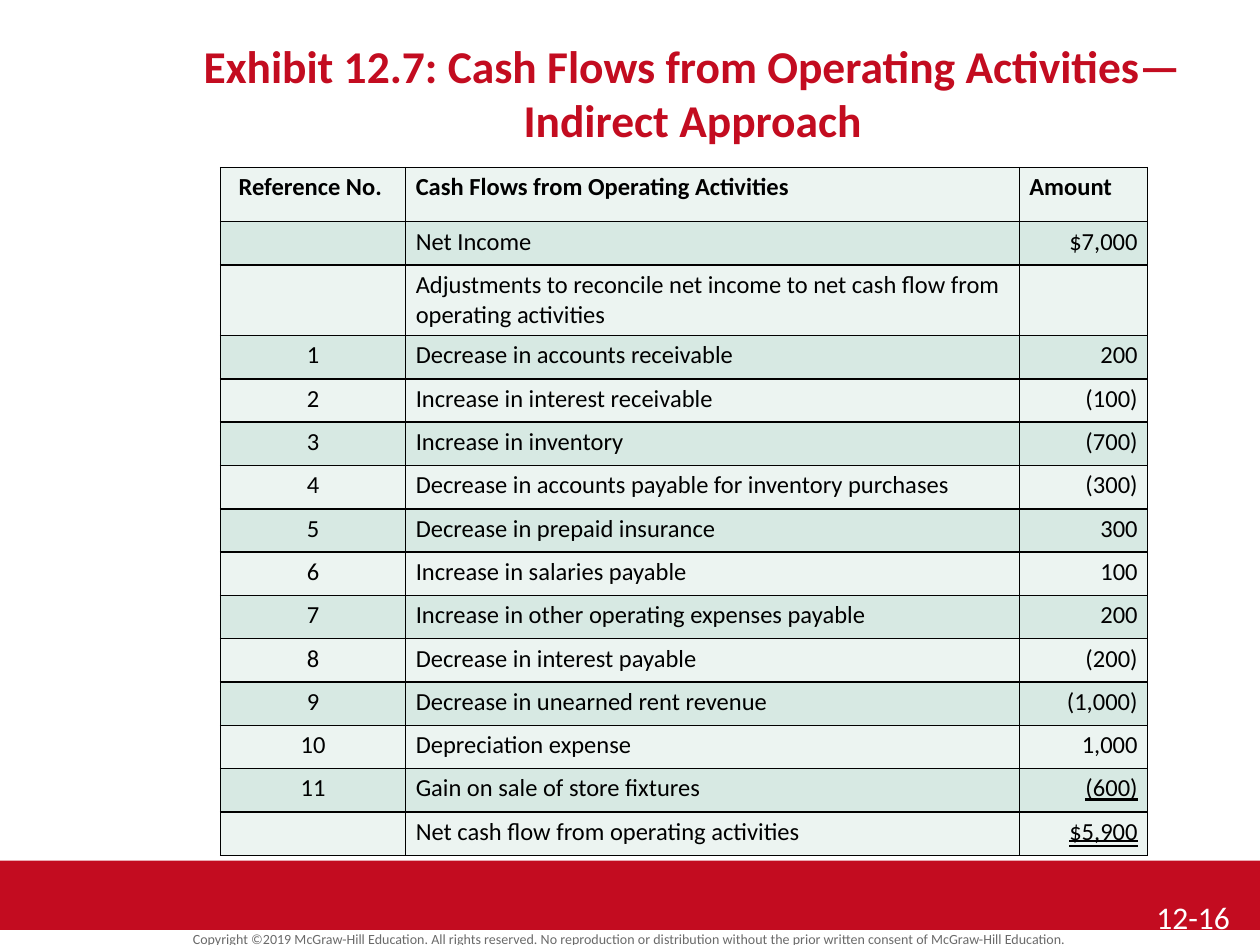
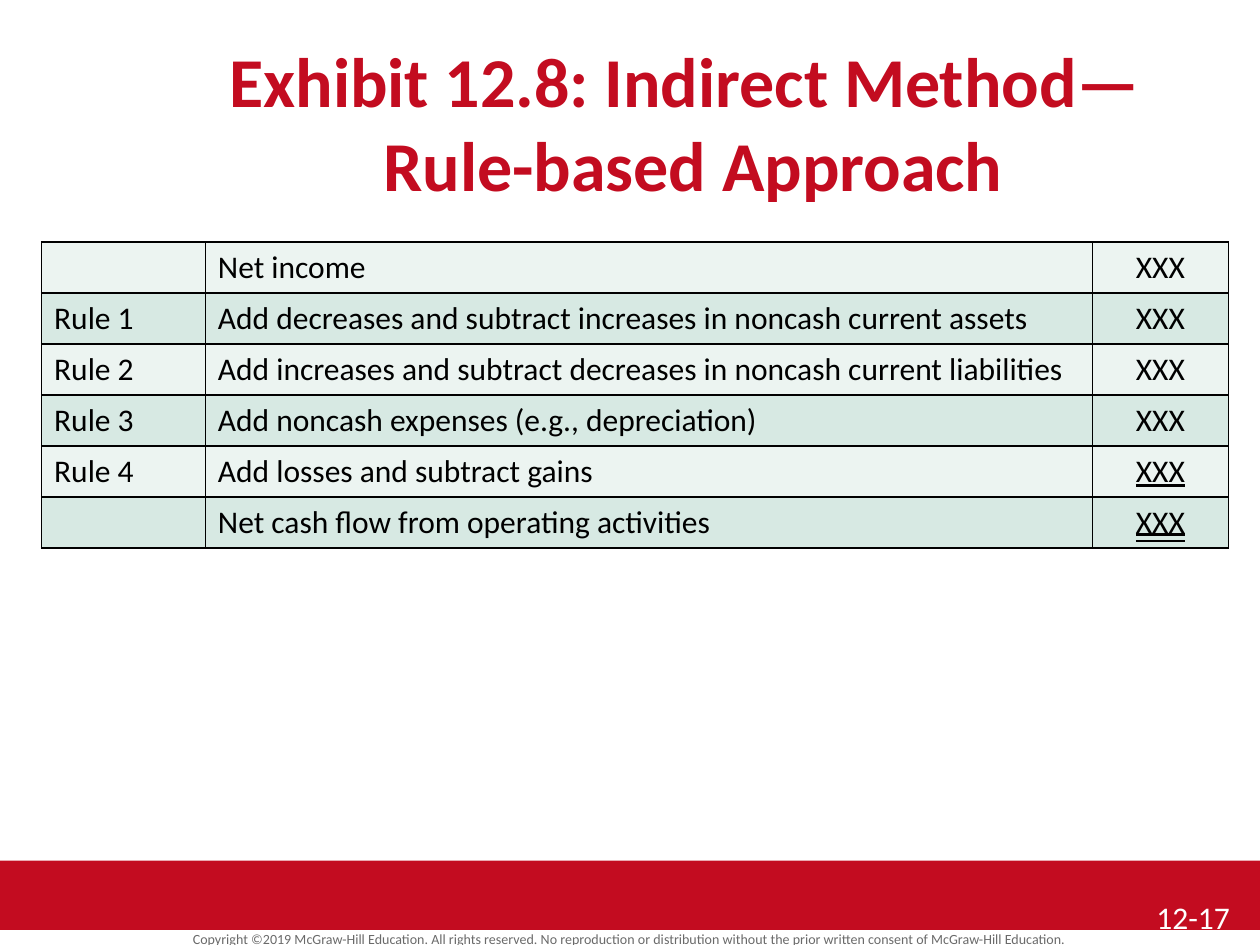
from dataclasses import dataclass, field

from lxml.etree import SubElement
from pptx import Presentation
from pptx.dml.color import RGBColor
from pptx.enum.shapes import MSO_SHAPE
from pptx.enum.text import MSO_ANCHOR, MSO_TEXT_UNDERLINE_TYPE, PP_ALIGN
from pptx.oxml.ns import qn
from pptx.util import Inches, Pt

FONT = "Calibri"
RED = "C30C20"
WHITE = "FFFFFF"
BLACK = "000000"
GRAY = "6A6A6A"
BANDS = ("ECF4F1", "D7E9E3")
COPYRIGHT = (
    "Copyright ©2019 McGraw-Hill Education. All rights reserved. No reproduction or "
    "distribution without the prior written consent of McGraw-Hill Education."
)
LEFT, CENTER, RIGHT = PP_ALIGN.LEFT, PP_ALIGN.CENTER, PP_ALIGN.RIGHT
SINGLE = MSO_TEXT_UNDERLINE_TYPE.SINGLE_LINE
DOUBLE = MSO_TEXT_UNDERLINE_TYPE.DOUBLE_LINE


@dataclass
class Box:
    left: float
    top: float
    width: float
    height: float

    def lengths(self) -> list:
        return [Inches(v) for v in (self.left, self.top, self.width, self.height)]


@dataclass
class Exhibit:
    title: str
    title_size: int
    page: str
    box: Box
    columns: tuple
    aligns: tuple
    rows: list
    text_size: int
    margin_x: float = 0.1
    margin_y: float = 0.05
    has_header: bool = False
    fixed_heights: dict = field(default_factory=dict)

    def row_heights(self) -> list:
        """Rows without a fixed height share what is left equally."""
        rest = self.box.height - sum(self.fixed_heights.values())
        equal = rest / (len(self.rows) - len(self.fixed_heights))
        return [self.fixed_heights.get(i, equal) for i in range(len(self.rows))]


BAND_BOX = Box(0, 6.83, 10, 0.55)
COPYRIGHT_BOX = Box(0, 7.36, 10, 0.19)
TITLE_BOX = Box(1, 0.25, 9, 0.67)
PAGE_BOX = Box(9.08, 7.08, 0.92, 0.42)

EXHIBITS = [
    Exhibit(
        title="Exhibit 12.7: Cash Flows from Operating Activities— Indirect Approach",
        title_size=26,
        page="12-16",
        box=Box(1.75, 1.33, 7.36, 5.46),
        columns=(1.47, 4.87, 1.02),
        aligns=(CENTER, LEFT, RIGHT),
        rows=[
            ("Reference No. ", "Cash Flows from Operating Activities", "Amount"),
            ("", "Net Income", "$7,000"),
            ("", "Adjustments to reconcile net income to net cash flow from "
                 "operating activities", ""),
            ("1", "Decrease in accounts receivable", "200"),
            ("2", "Increase in interest receivable", "(100)"),
            ("3", "Increase in inventory", "(700)"),
            ("4", "Decrease in accounts payable for inventory purchases", "(300)"),
            ("5", "Decrease in prepaid insurance", "300"),
            ("6", "Increase in salaries payable", "100"),
            ("7", "Increase in other operating expenses payable", "200"),
            ("8", "Decrease in interest payable", "(200)"),
            ("9", "Decrease in unearned rent revenue", "(1,000)"),
            ("10", "Depreciation expense", "1,000"),
            ("11", "Gain on sale of store fixtures", "(600)"),
            ("", "Net cash flow from operating activities", "$5,900"),
        ],
        text_size=14,
        margin_x=0.08,
        margin_y=0.04,
        has_header=True,
        fixed_heights={0: 0.43, 2: 0.56},
    ),
    Exhibit(
        title="Exhibit 12.8: Indirect Method— \vRule-based Approach",
        title_size=40,
        page="12-17",
        box=Box(0.33, 1.92, 9.42, 2.43),
        columns=(1.3, 7.04, 1.08),
        aligns=(LEFT, LEFT, CENTER),
        rows=[
            ("", "Net income", "XXX"),
            ("Rule 1", "Add decreases and subtract increases in noncash current assets",
             "XXX"),
            ("Rule 2", "Add increases and subtract decreases in noncash current liabilities",
             "XXX"),
            ("Rule 3", "Add noncash expenses (e.g., depreciation)", "XXX"),
            ("Rule 4", "Add losses and subtract gains", "XXX"),
            ("", "Net cash flow from operating activities", "XXX"),
        ],
        text_size=18,
    ),
]


def rgb(color: str) -> RGBColor:
    return RGBColor.from_string(color)


def write(tf, text: str, size: int, color: str, align=LEFT, **formats):
    """Fill the first paragraph; an empty one still keeps its text size."""
    p = tf.paragraphs[0]
    p.alignment = align
    if not text:
        SubElement(p._p, qn("a:endParaRPr"), sz=str(size * 100))
        return p
    p.text = text
    for r in p.runs:
        for name, value in {"name": FONT, "size": Pt(size), **formats}.items():
            setattr(r.font, name, value)
        r.font.color.rgb = rgb(color)
    return p


def add_text(s, box: Box, text: str, size: int, color: str, align=LEFT, **formats):
    tf = s.shapes.add_textbox(*box.lengths()).text_frame
    tf.word_wrap = True
    tf.vertical_anchor = MSO_ANCHOR.TOP
    return write(tf, text, size, color, align, **formats)


def add_frame(s, exhibit: Exhibit) -> None:
    """Draw the band, copyright line, title and page number."""
    band = s.shapes.add_shape(MSO_SHAPE.RECTANGLE, *BAND_BOX.lengths())
    band.shadow.inherit = False
    band.fill.solid()
    band.fill.fore_color.rgb = rgb(RED)
    band.line.fill.background()
    p = add_text(s, COPYRIGHT_BOX, COPYRIGHT, 8, GRAY, CENTER)
    p.line_spacing = 0.8
    add_text(s, TITLE_BOX, exhibit.title, exhibit.title_size, RED, CENTER, bold=True)
    add_text(s, PAGE_BOX, exhibit.page, 18, WHITE)


def add_borders(cell) -> None:
    tc_pr = cell._tc.get_or_add_tcPr()
    for side in ("lnL", "lnR", "lnT", "lnB"):
        line = SubElement(tc_pr, qn(f"a:{side}"), w=str(Pt(1)))
        fill = SubElement(line, qn("a:solidFill"))
        SubElement(fill, qn("a:srgbClr"), val=BLACK)


def add_exhibit_table(s, exhibit: Exhibit) -> None:
    n_rows, n_cols = len(exhibit.rows), len(exhibit.columns)
    table = s.shapes.add_table(n_rows, n_cols, *exhibit.box.lengths()).table
    table.first_row = table.horz_banding = False
    for column, width in zip(table.columns, exhibit.columns):
        column.width = Inches(width)
    for row, height in zip(table.rows, exhibit.row_heights()):
        row.height = Inches(height)

    margins = {
        "margin_left": exhibit.margin_x, "margin_right": exhibit.margin_x,
        "margin_top": exhibit.margin_y, "margin_bottom": exhibit.margin_y,
    }
    amount_underlines = {n_rows - 2: SINGLE, n_rows - 1: DOUBLE}
    for i, texts in enumerate(exhibit.rows):
        is_header = exhibit.has_header and i == 0
        for j, text in enumerate(texts):
            cell = table.cell(i, j)
            for name, value in margins.items():
                setattr(cell, name, Inches(value))
            add_borders(cell)
            cell.fill.solid()
            cell.fill.fore_color.rgb = rgb(BANDS[i % 2])
            align = LEFT if is_header and j > 0 else exhibit.aligns[j]
            formats = {"bold": is_header}
            if j == n_cols - 1 and i in amount_underlines:
                formats["underline"] = amount_underlines[i]
            write(cell.text_frame, text, exhibit.text_size, BLACK, align, **formats)


def main() -> None:
    prs = Presentation()
    prs.slide_width, prs.slide_height = Inches(10), Inches(7.5)
    for exhibit in EXHIBITS:
        s = prs.slides.add_slide(prs.slide_layouts[6])
        add_frame(s, exhibit)
        add_exhibit_table(s, exhibit)
    prs.save("out.pptx")


if __name__ == "__main__":
    main()
